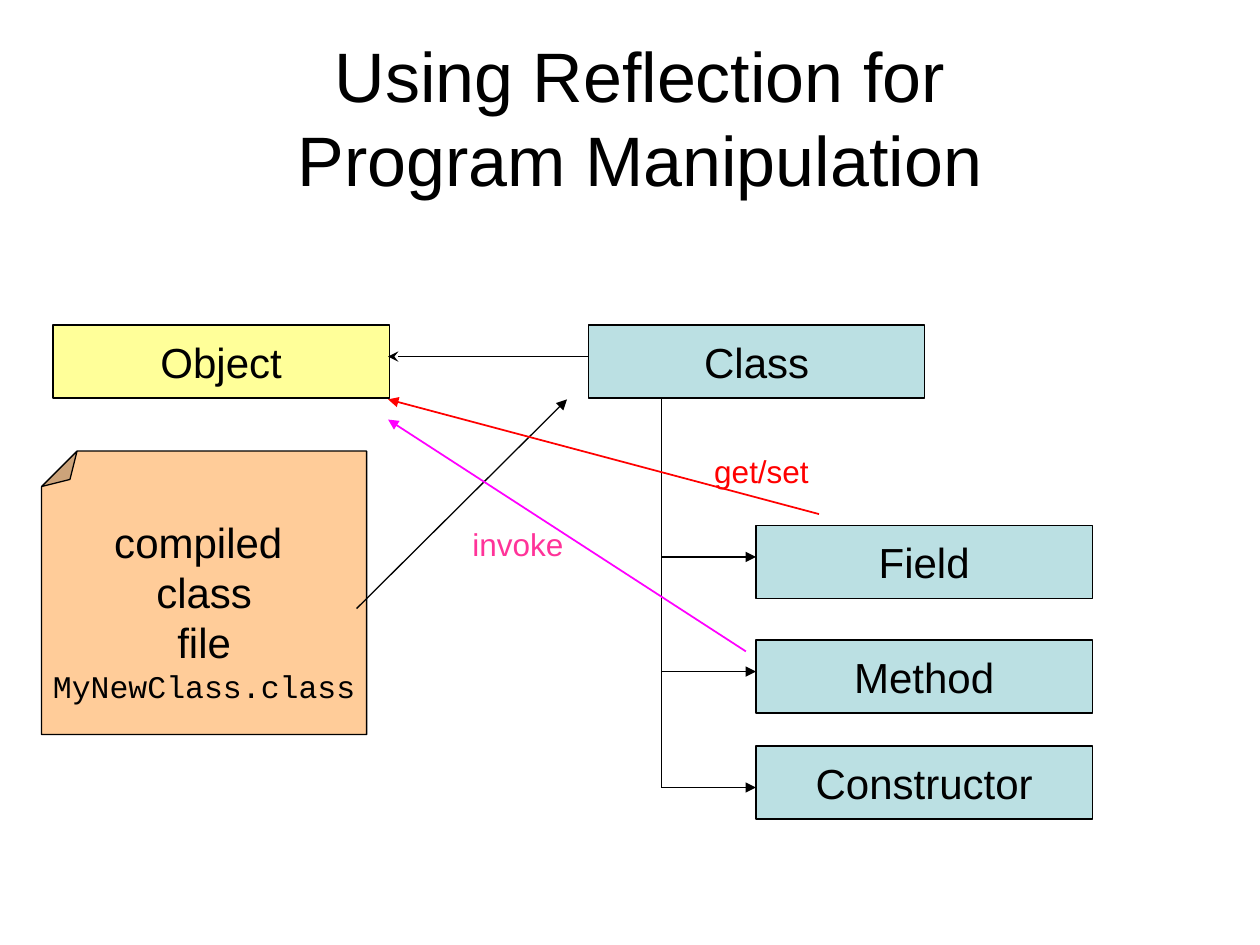
from lxml import etree
from pptx import Presentation, util as u
from pptx.dml.color import RGBColor
from pptx.enum import shapes as s, text as t
from pptx.oxml.ns import qn

hue = RGBColor.from_string
Inches = u.Inches


def write(frame, words, size, tint, align):
    frame.text = words
    for para in frame.paragraphs:
        para.alignment = align
        for run in para.runs:
            run.font.size = u.Pt(size)
            run.font.name = "Arial"
            run.font.color.rgb = hue(tint)


def block(kind, left, top, wide, high, fill, words):
    shape = slide.shapes.add_shape(
        kind, Inches(left), Inches(top), Inches(wide), Inches(high))
    shape.shadow.inherit = False
    shape.fill.solid()
    shape.fill.fore_color.rgb = hue(fill)
    shape.line.color.rgb = hue("000000")
    shape.line.width = u.Pt(0.75)
    frame = shape.text_frame
    frame.word_wrap = False
    frame.vertical_anchor = t.MSO_ANCHOR.MIDDLE
    write(frame, words, 24, "000000", t.PP_ALIGN.CENTER)
    return shape


deck = Presentation()
deck.slide_width, deck.slide_height = Inches(10), Inches(7.5)
slide = deck.slides.add_slide(deck.slide_layouts[5])

title = slide.shapes.title
title.left, title.top = Inches(0.5), Inches(0.3)
title.width, title.height = Inches(9), Inches(1.25)
title.text_frame.vertical_anchor = t.MSO_ANCHOR.MIDDLE
write(title.text_frame, " Using Reflection for\v Program Manipulation",
      40, "000000", t.PP_ALIGN.CENTER)

for words, left, top, fill in [
    ("Object", 0.42, 2.58, "FFFF99"),
    ("Class", 4.67, 2.58, "BBE0E3"),
    ("Field", 6, 4.17, "BBE0E3"),
    ("Method", 6, 5.08, "BBE0E3"),
    ("Constructor", 6, 5.92, "BBE0E3"),
]:
    block(s.MSO_SHAPE.RECTANGLE, left, top, 2.67, 0.58, fill, words)

page = block(s.MSO_SHAPE.FOLDED_CORNER, 0.33, 3.58, 2.58, 2.25, "FFCC99",
             "compiled \nclass\nfile\nMyNewClass.class")
fold = page._element.spPr.find(qn("a:prstGeom")).find(qn("a:avLst"))
etree.SubElement(fold, qn("a:gd"), name="adj", fmla="val 12500")
page.rotation = 180
page.text_frame._txBody.bodyPr.set("rot", "10800000")
name = page.text_frame.paragraphs[-1]
name.space_after = u.Pt(6)
name.runs[0].font.size = u.Pt(18)
name.runs[0].font.name = "Courier New"

trunk = 5.25
links = [
    (trunk, 3.17, trunk, 6.25, "000000", 0.75, None),
    (4.67, 2.83, 3.08, 2.83, "000000", 0.75, "stealth"),
    (2.83, 4.83, 4.5, 3.17, "000000", 0.75, "triangle"),
    (6.5, 4.08, 3.08, 3.17, "FF0000", 1, "triangle"),
    (5.92, 5.17, 3.08, 3.33, "FF00FF", 1, "triangle"),
]
for y in (4.42, 5.33, 6.25):
    links.append((trunk, y, 6, y, "000000", 1, "triangle"))

for x1, y1, x2, y2, tint, width, tip in links:
    link = slide.shapes.add_connector(
        s.MSO_CONNECTOR.STRAIGHT, Inches(x1), Inches(y1), Inches(x2), Inches(y2))
    link.line.color.rgb = hue(tint)
    link.line.width = u.Pt(width)
    if tip:
        etree.SubElement(link.line._get_or_add_ln(), qn("a:tailEnd"), type=tip)
    etree.SubElement(link._element.spPr, qn("a:effectLst"))

for words, left, top, wide, tint in [
    ("get/set", 5.57, 3.54, 0.95, "FF0000"),
    ("invoke", 3.65, 4.12, 0.92, "FF3399"),
]:
    label = slide.shapes.add_textbox(
        Inches(left), Inches(top), Inches(wide), Inches(0.4))
    label.text_frame.word_wrap = False
    label.text_frame.auto_size = t.MSO_AUTO_SIZE.SHAPE_TO_FIT_TEXT
    write(label.text_frame, words, 18, tint, t.PP_ALIGN.LEFT)

deck.save("out.pptx")
